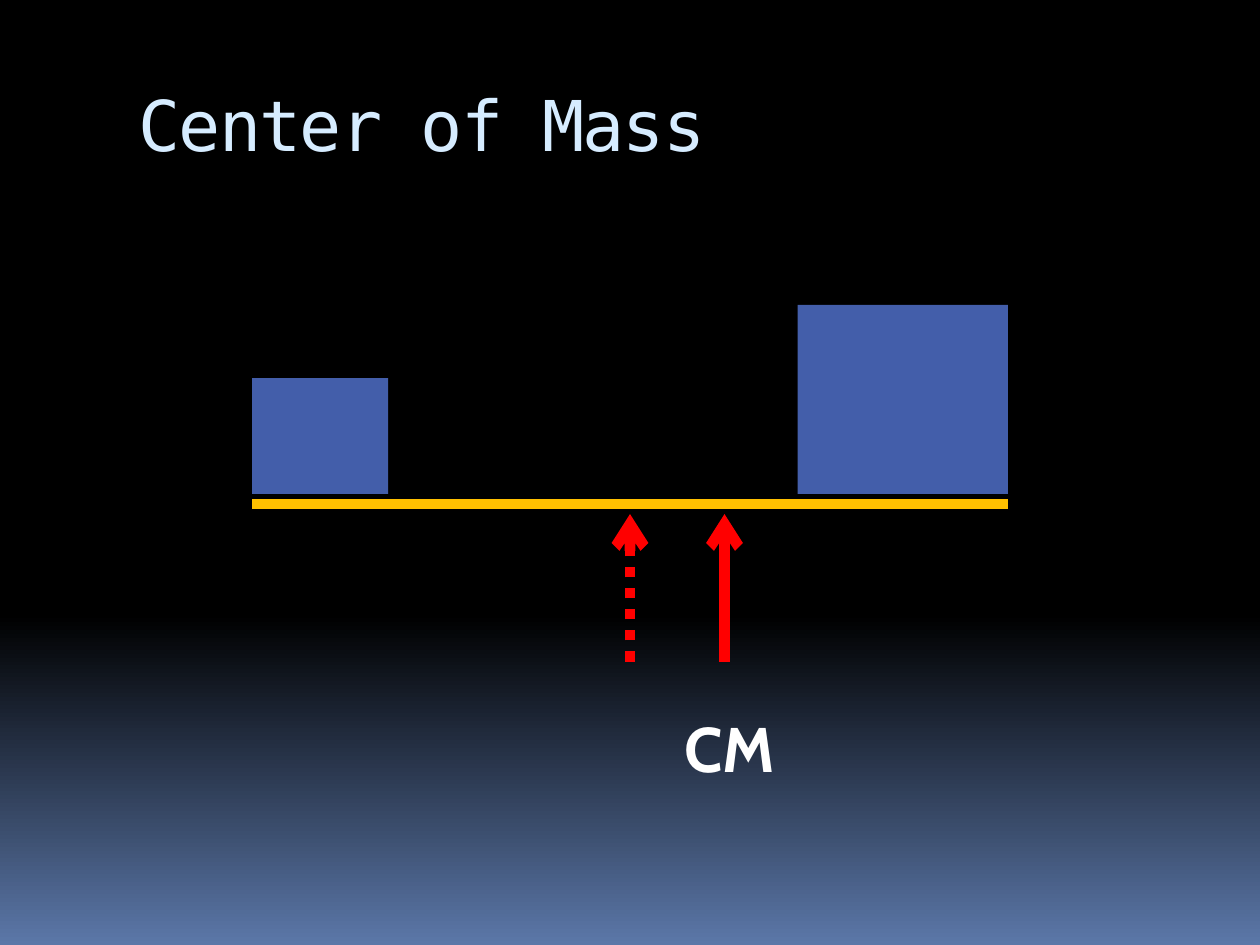
from lxml.etree import SubElement
from pptx import Presentation
from pptx.dml.color import RGBColor
from pptx.enum.dml import MSO_LINE
from pptx.enum.shapes import MSO_CONNECTOR, MSO_SHAPE
from pptx.enum.text import PP_ALIGN
from pptx.oxml.ns import qn
from pptx.util import Inches, Pt


def rgb(value):
    """Turn a hex string into a colour."""
    return RGBColor.from_string(value)


def set_background(s, stops, angle):
    """Fill the slide background with a two-stop linear gradient."""
    fill = s.background.fill
    fill.gradient()
    fill.gradient_angle = angle
    for stop, (position, color) in zip(fill.gradient_stops, stops):
        stop.position = position
        stop.color.rgb = rgb(color)


def add_text(s, box, text, font, size, color, bold=False,
             align=PP_ALIGN.LEFT, top=0.05):
    """Add a one-paragraph text box and return its paragraph."""
    tf = s.shapes.add_textbox(*map(Inches, box)).text_frame
    tf.word_wrap = True
    tf.margin_top = Inches(top)
    p = tf.paragraphs[0]
    p.text = text
    p.alignment = align
    p.font.name = font
    p.font.size = Pt(size)
    p.font.bold = bold
    p.font.color.rgb = rgb(color)
    return p


def add_block(s, left, bottom, width, height, color):
    """Add a plain rectangle standing on the given bottom edge."""
    sp = s.shapes.add_shape(MSO_SHAPE.RECTANGLE, Inches(left),
                            Inches(bottom - height), Inches(width), Inches(height))
    sp.shadow.inherit = False
    sp.fill.solid()
    sp.fill.fore_color.rgb = rgb(color)
    sp.line.fill.background()


def add_line(s, start, end, color, width=6, dash=None, arrow=False):
    """Add a straight line, optionally dashed or with an arrowhead at its end."""
    line = s.shapes.add_connector(MSO_CONNECTOR.STRAIGHT,
                                  *map(Inches, (*start, *end)))
    line.line.color.rgb = rgb(color)
    line.line.width = Pt(width)
    if dash:
        line.line.dash_style = dash
    if arrow:
        SubElement(line.line._get_or_add_ln(), qn("a:tailEnd"), type="arrow")
    SubElement(line._element.spPr, qn("a:effectLst"))


def main():
    """Build the centre of mass slide."""
    prs = Presentation()
    prs.slide_width, prs.slide_height = Inches(10), Inches(7.5)
    s = prs.slides.add_slide(prs.slide_layouts[6])
    set_background(s, [(0.65, "000000"), (1, "5B77A8")], 270)

    title = add_text(s, (1, 0.56, 8.5, 1), "Center of Mass",
                     "DejaVu Sans Mono", 40, "D6ECFF", top=0.09)
    title.runs[0].font._element.set("spc", "-100")

    left, right, beam = 2, 8, 4
    add_line(s, (left, beam), (right, beam), "FFC000")
    for x, width, height in ((left, 1.08, 0.92), (right - 1.67, 1.67, 1.5)):
        add_block(s, x, beam - 0.08, width, height, "435EAA")

    for x, dash in (((left + right) / 2, MSO_LINE.ROUND_DOT), (5.75, None)):
        add_line(s, (x, 5.25), (x, beam + 0.08), "FF0000", dash=dash, arrow=True)
    add_text(s, (5.25, 5.58, 1.08, 0.71), "CM", "Cabin", 36, "FFFFFF",
             bold=True, align=PP_ALIGN.CENTER)

    prs.save("out.pptx")


if __name__ == "__main__":
    main()
